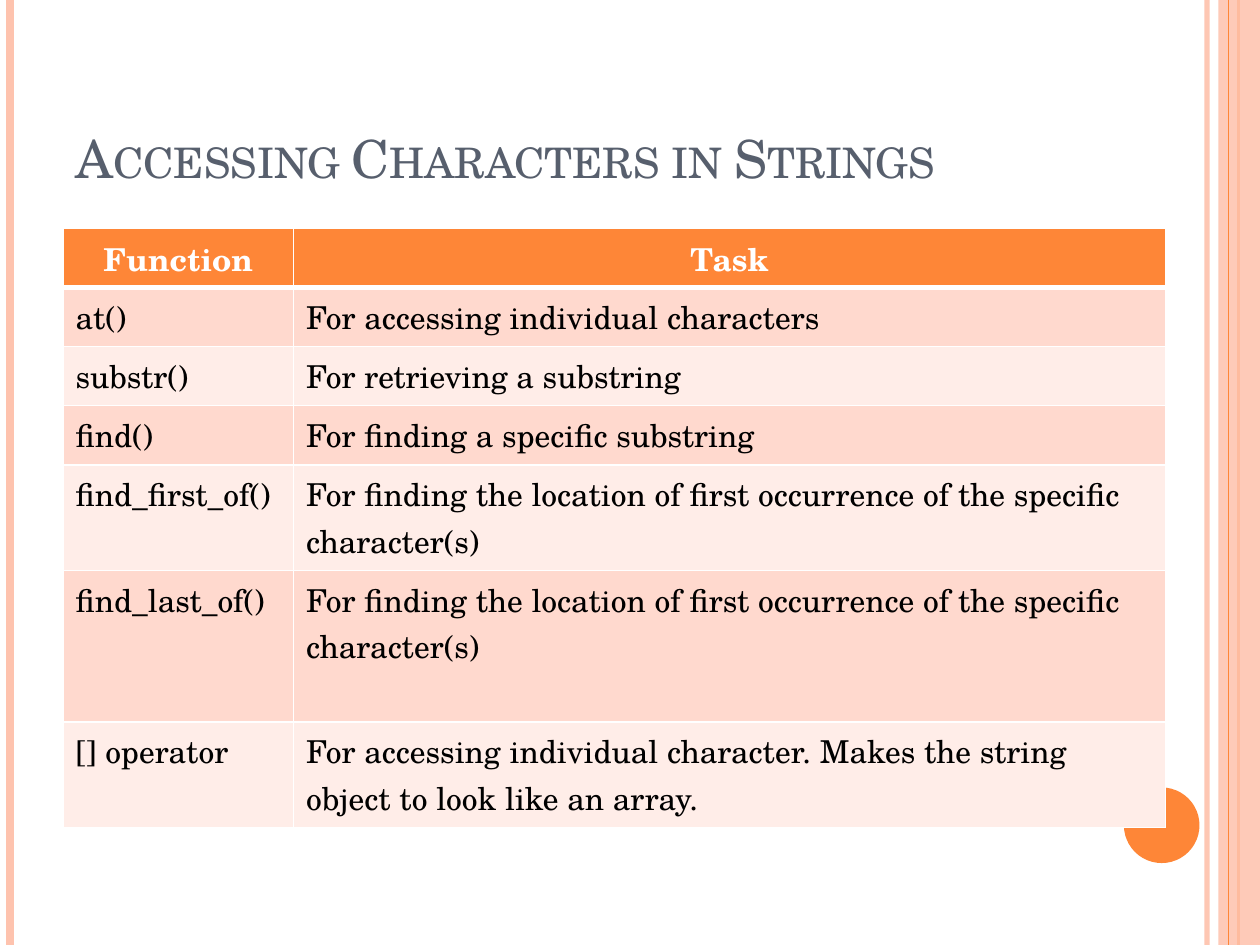
from dataclasses import dataclass

from lxml import etree
from pptx import Presentation
from pptx.dml.color import RGBColor
from pptx.enum.shapes import MSO_CONNECTOR, MSO_SHAPE
from pptx.enum.text import MSO_ANCHOR, PP_ALIGN
from pptx.oxml.ns import qn
from pptx.util import Inches, Pt

STRAIGHT = MSO_CONNECTOR.STRAIGHT
RECTANGLE, OVAL = MSO_SHAPE.RECTANGLE, MSO_SHAPE.OVAL
BOTTOM, TOP = MSO_ANCHOR.BOTTOM, MSO_ANCHOR.TOP
LEFT, CENTER = PP_ALIGN.LEFT, PP_ALIGN.CENTER


@dataclass(frozen=True)
class Theme:
    font: str = "TeX Gyre Schola"
    title_size: int = 30
    table_size: int = 18
    title: str = "575F6D"
    accent: str = "FE8637"
    stripe: str = "FEC3AE"
    bands: tuple = ("FFD9CE", "FFEDE8")
    white: str = "FFFFFF"
    black: str = "000000"


THEME = Theme()
PAGE_WIDTH, PAGE_HEIGHT = 10, 7.5
COLUMN_WIDTHS = (1.83, 6.92)
HEADER = ("Function", "Task")
ROW_HEIGHT = 0.47
# function, task, row height
FUNCTIONS = [
    ("at()", "For accessing individual characters", ROW_HEIGHT),
    ("substr()", "For retrieving a substring", ROW_HEIGHT),
    ("find()", "For finding a specific substring", ROW_HEIGHT),
    ("find_first_of()", "For finding the location of first occurrence of the specific character(s)", 0.84),
    ("find_last_of()", "For finding the location of first occurrence of the specific character(s)", 1.2),
    ("[] operator", "For accessing individual character. Makes the string object to look like an array.", 0.84),
]


def rgb(color):
    return RGBColor.from_string(color)


def set_opacity(properties, percent):
    color = properties.find(".//" + qn("a:srgbClr"))
    etree.SubElement(color, qn("a:alpha"), val=str(percent * 1000))


def write_text(frame, text, size, color, bold=False, small_caps=False, align=LEFT):
    frame.word_wrap = True
    para = frame.paragraphs[0]
    para.alignment = align
    span = para.add_run()
    span.text = text
    font = span.font
    font.name, font.size, font.bold = THEME.font, Pt(size), bold
    font.color.rgb = rgb(color)
    if small_caps:
        span._r.get_or_add_rPr().set("cap", "small")


def add_rule(page, x, color, width, opacity=100):
    rule = page.shapes.add_connector(STRAIGHT, Inches(x), 0, Inches(x), Inches(PAGE_HEIGHT))
    rule.line.color.rgb = rgb(color)
    rule.line.width = Pt(width)
    properties = rule._element.spPr
    if opacity < 100:
        set_opacity(properties, opacity)
    etree.SubElement(properties, qn("a:effectLst"))


def add_plain_shape(page, kind, box, color, opacity=100):
    shape = page.shapes.add_shape(kind, *map(Inches, box))
    shape.shadow.inherit = False
    shape.fill.solid()
    shape.fill.fore_color.rgb = rgb(color)
    shape.line.fill.background()
    if opacity < 100:
        set_opacity(shape._element.spPr, opacity)


def add_side_trim(page, band_box):
    band_left = band_box[0]
    add_rule(page, band_left - 0.09, THEME.stripe, 3, opacity=93)
    add_rule(page, 0.08, THEME.stripe, 4.5)
    add_rule(page, band_left + 0.16, THEME.accent, 1.5)
    add_plain_shape(page, RECTANGLE, band_box, THEME.stripe, opacity=87)
    add_rule(page, band_left + 0.08, THEME.accent, 0.75)
    add_plain_shape(page, OVAL, (band_left - 0.75, 6.25, 0.6, 0.6), THEME.accent)


def add_title(page, box, text):
    frame = page.shapes.add_textbox(*map(Inches, box)).text_frame
    frame.vertical_anchor = BOTTOM
    write_text(frame, text, THEME.title_size, THEME.title, small_caps=True)


def set_cell_borders(cell, widths):
    properties = cell._tc.get_or_add_tcPr()
    for position, (side, width) in enumerate(widths.items()):
        border = etree.Element(qn(f"a:{side}"), w=str(Pt(width)))
        fill = etree.SubElement(border, qn("a:solidFill"))
        etree.SubElement(fill, qn("a:srgbClr"), val=THEME.white)
        properties.insert(position, border)


def add_function_table(page, box):
    rows = [(*HEADER, ROW_HEIGHT), *FUNCTIONS]
    table = page.shapes.add_table(len(rows), len(COLUMN_WIDTHS), *map(Inches, box)).table
    for column, width in zip(table.columns, COLUMN_WIDTHS):
        column.width = Inches(width)
    for row_index, (*texts, height) in enumerate(rows):
        table.rows[row_index].height = Inches(height)
        header = row_index == 0
        fill = THEME.accent if header else THEME.bands[(row_index - 1) % 2]
        # The rule below the header is the only thick one
        borders = {"lnL": 1, "lnR": 1, "lnT": 3 if row_index == 1 else 1, "lnB": 3 if header else 1}
        for column_index, text in enumerate(texts):
            cell = table.cell(row_index, column_index)
            cell.vertical_anchor = TOP
            cell.fill.solid()
            cell.fill.fore_color.rgb = rgb(fill)
            set_cell_borders(cell, borders)
            write_text(cell.text_frame, text, THEME.table_size,
                       THEME.white if header else THEME.black,
                       bold=header, align=CENTER if header else LEFT)


def main():
    deck = Presentation()
    deck.slide_width, deck.slide_height = Inches(PAGE_WIDTH), Inches(PAGE_HEIGHT)
    page = deck.slides.add_slide(deck.slide_layouts[6])
    add_side_trim(page, (9.67, 0, 0.33, PAGE_HEIGHT))
    add_title(page, (0.5, 0.3, 8.17, 1.25), "Accessing Characters in Strings")
    table_height = ROW_HEIGHT + sum(height for *_, height in FUNCTIONS)
    add_function_table(page, (0.5, 1.81, sum(COLUMN_WIDTHS), table_height))
    deck.save("out.pptx")


if __name__ == "__main__":
    main()
